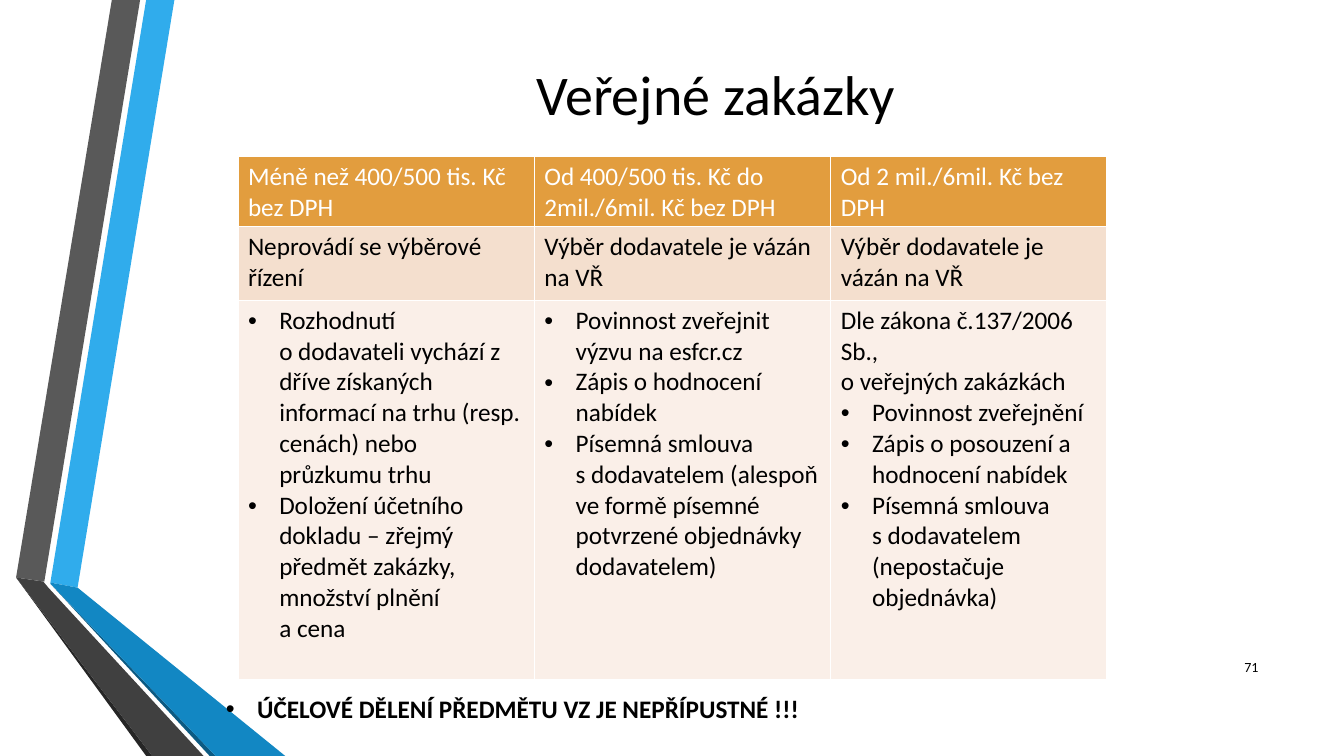
from dataclasses import dataclass

from lxml.etree import SubElement as Sub
from pptx import Presentation
from pptx.dml.color import RGBColor as Rgb
from pptx.enum.text import MSO_ANCHOR as Anchor, MSO_AUTO_SIZE as Auto, PP_ALIGN as Align
from pptx.oxml.ns import qn
from pptx.util import Inches, Pt

FONT = "Calibri"
HUES = {
    "blue": "30ACEC", "gray": "595959", "dark": "262626", "navy": "0C5A82",
    "deep": "1287C3", "coal": "404040", "black": "000000", "white": "FFFFFF",
    "head": "E29D3E", "mid": "F4DFCE", "pale": "FAEFE8",
}


@dataclass
class Band:
    hue: str
    dots: list[tuple[float, float]]


@dataclass
class Para:
    text: str
    dot: bool = False


@dataclass
class Row:
    high: float
    fill: str
    ink: str
    cells: list[list[Para]]


BANDS = [
    Band("blue", [(0.5, 5.78), (0.77, 5.83), (1.73, 0), (1.45, 0)]),
    Band("gray", [(1.39, 0), (1.11, 0), (0.16, 5.73), (0.44, 5.77)]),
    Band("dark", [(0.16, 5.73), (1.45, 7.5), (1.51, 7.5)]),
    Band("navy", [(0.5, 5.79), (2.08, 7.5), (2.14, 7.5)]),
    Band("deep", [(0.5, 5.79), (2.14, 7.5), (2.83, 7.5), (0.77, 5.83), (0.5, 5.78)]),
    Band("coal", [(2.02, 7.5), (0.48, 5.83), (0.43, 5.77), (0.16, 5.73), (1.51, 7.5)]),
]

COLS = [2.94, 2.94, 2.74]
ROWS = [
    Row(0.7, "head", "white", [
        [Para("Méně než 400/500 tis. Kč bez DPH")],
        [Para("Od 400/500 tis. Kč do 2mil./6mil. Kč bez DPH")],
        [Para("Od 2 mil./6mil. Kč bez DPH")],
    ]),
    Row(0.73, "mid", "black", [
        [Para("Neprovádí se výběrové řízení")],
        [Para("Výběr dodavatele je vázán na VŘ")],
        [Para("Výběr dodavatele je vázán na VŘ")],
    ]),
    Row(3.76, "pale", "black", [
        [
            Para("Rozhodnutí \no dodavateli vychází z dříve získaných informací "
                 "na trhu (resp. cenách) nebo průzkumu trhu", True),
            Para("Doložení účetního dokladu – zřejmý předmět zakázky, "
                 "množství plnění \na cena", True),
        ],
        [
            Para("Povinnost zveřejnit výzvu na esfcr.cz", True),
            Para("Zápis o hodnocení nabídek", True),
            Para("Písemná smlouva \ns dodavatelem (alespoň ve formě písemné "
                 "potvrzené objednávky dodavatelem)", True),
        ],
        [
            Para("Dle zákona č.137/2006 Sb., \no veřejných zakázkách"),
            Para("Povinnost zveřejnění", True),
            Para("Zápis o posouzení a hodnocení nabídek", True),
            Para("Písemná smlouva \ns dodavatelem (nepostačuje objednávka)", True),
        ],
    ]),
]


def color(name: str) -> Rgb:
    return Rgb.from_string(HUES[name])


def write(frame, paras: list[Para], size: int, ink: str = "black",
          bold: bool = False, align: Align = Align.LEFT) -> None:
    for i, item in enumerate(paras):
        para = frame.add_paragraph() if i else frame.paragraphs[0]
        para.alignment = align
        para.space_before = Pt(0)
        if item.dot:
            props = para._p.get_or_add_pPr()
            props.set("marL", str(Inches(0.31)))
            props.set("indent", str(-Inches(0.31)))
            Sub(props, qn("a:buFont")).set("typeface", "Arial")
            Sub(props, qn("a:buChar")).set("char", "•")
        for j, line in enumerate(item.text.split("\n")):
            if j:
                para.add_line_break()
            run = para.add_run()
            run.text = line
            font = run.font
            font.name, font.size, font.bold = FONT, Pt(size), bold
            font.color.rgb = color(ink)


def place(shape, left: float, top: float, wide: float, high: float) -> None:
    shape.left, shape.top = Inches(left), Inches(top)
    shape.width, shape.height = Inches(wide), Inches(high)


def draw(slide, band: Band, rank: int) -> None:
    first, *rest = [(Inches(x), Inches(y)) for x, y in band.dots]
    pen = slide.shapes.build_freeform(*first)
    pen.add_line_segments(rest, close=True)
    shape = pen.convert_to_shape()
    shape.shadow.inherit = False
    shape.fill.solid()
    shape.fill.fore_color.rgb = color(band.hue)
    shape.line.fill.background()
    # Bands lie behind the text; the tree starts with two property nodes
    shape.element.getparent().insert(2 + rank, shape.element)


def tabulate(slide) -> None:
    high = sum(row.high for row in ROWS)
    table = slide.shapes.add_table(
        len(ROWS), len(COLS), Inches(2.36), Inches(1.55),
        Inches(sum(COLS)), Inches(high)).table
    table.horz_banding = False
    for col, wide in zip(table.columns, COLS):
        col.width = Inches(wide)
    for r, row in enumerate(ROWS):
        table.rows[r].height = Inches(row.high)
        for c, paras in enumerate(row.cells):
            cell = table.cell(r, c)
            cell.fill.solid()
            cell.fill.fore_color.rgb = color(row.fill)
            write(cell.text_frame, paras, 18, row.ink)


def main() -> None:
    deck = Presentation()
    deck.slide_width, deck.slide_height = Inches(13.33), Inches(7.5)
    slide = deck.slides.add_slide(deck.slide_layouts[1])

    # Ribbon on the left
    for rank, band in enumerate(BANDS):
        draw(slide, band, rank)

    # Title
    title = slide.shapes.title
    place(title, 1.62, 0.47, 10.96, 0.91)
    title.text_frame.vertical_anchor = Anchor.MIDDLE
    write(title.text_frame, [Para("Veřejné zakázky")], 40, align=Align.CENTER)

    # Table of limits
    tabulate(slide)

    # Warning below the table
    note = slide.placeholders[1]
    place(note, 2.14, 6.83, 9.06, 0.4)
    note.text_frame.auto_size = Auto.SHAPE_TO_FIT_TEXT
    write(note.text_frame,
          [Para("ÚČELOVÉ DĚLENÍ PŘEDMĚTU VZ JE NEPŘÍPUSTNÉ !!!", True)], 18, bold=True)

    # Page number
    page = slide.shapes.add_textbox(
        Inches(11.98), Inches(6.42), Inches(0.6), Inches(0.4)).text_frame
    page.word_wrap = True
    page.vertical_anchor = Anchor.MIDDLE
    write(page, [Para("71")], 10, align=Align.RIGHT)

    deck.save("out.pptx")


if __name__ == "__main__":
    main()
